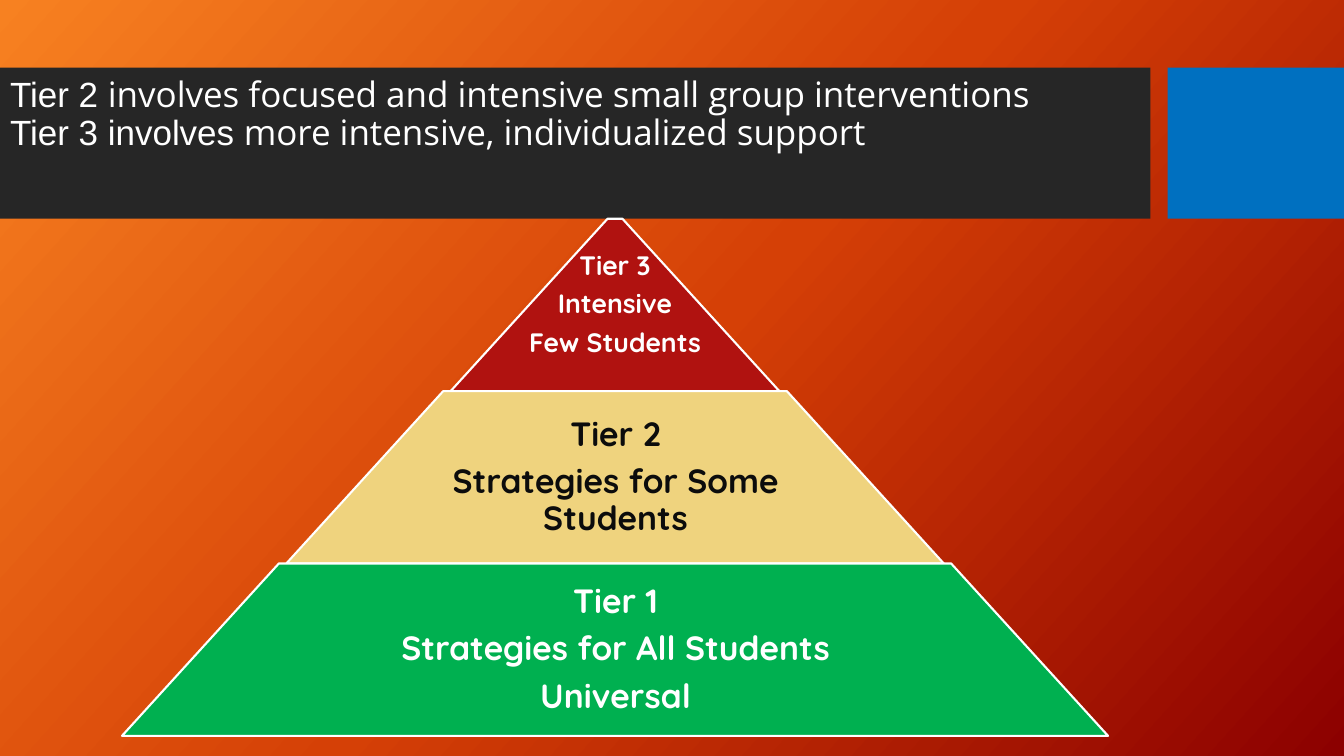
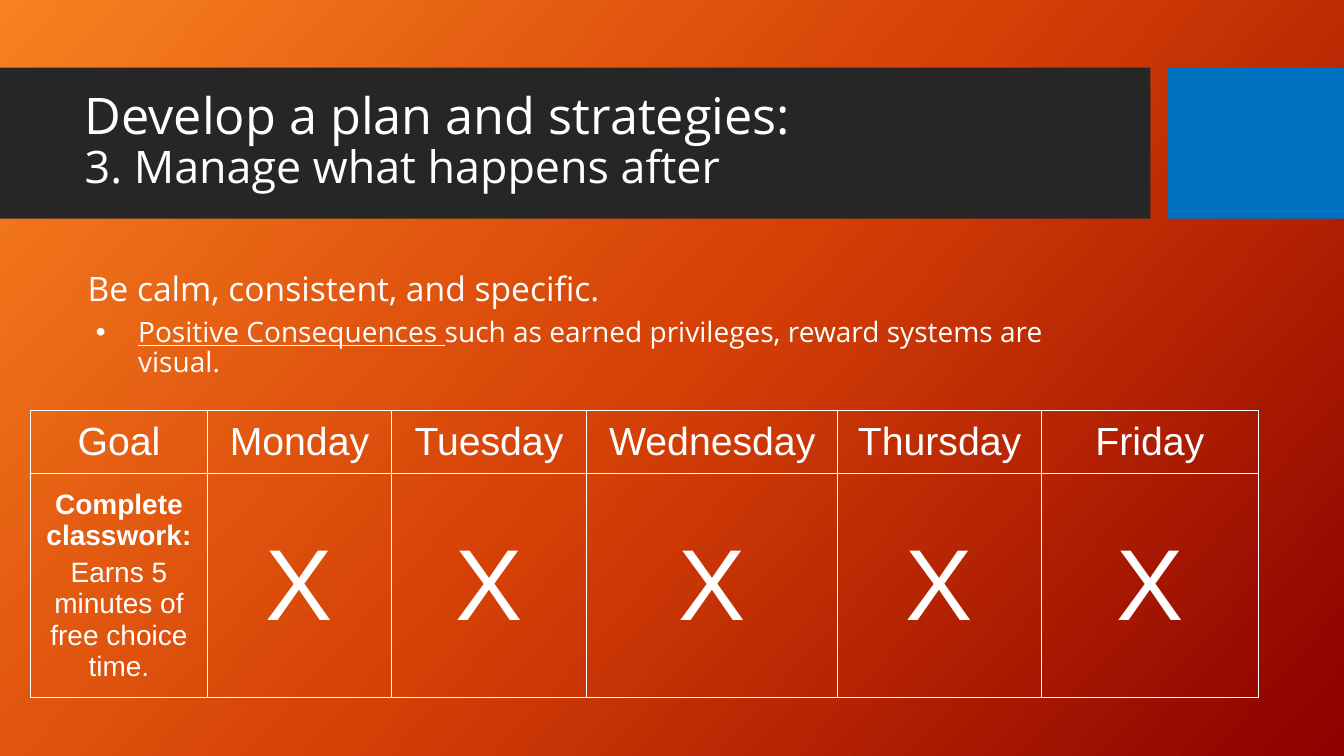
"""Build two classroom behaviour-support slides: the tier pyramid and the weekly reward plan."""
from copy import deepcopy
from dataclasses import dataclass
from typing import NamedTuple

from pptx import Presentation
from pptx.dml.color import RGBColor
from pptx.enum.shapes import MSO_SHAPE
from pptx.enum.text import MSO_ANCHOR, MSO_AUTO_SIZE, PP_ALIGN
from pptx.oxml.ns import qn
from pptx.oxml.xmlchemy import OxmlElement
from pptx.util import Emu, Pt


@dataclass(frozen=True)
class Theme:
    white: str = "FFFFFF"
    ink: str = "0C0C0C"
    band: str = "262626"
    accent: str = "0070C0"
    red: str = "B01210"
    sand: str = "EFD37E"
    green: str = "00B050"
    gradient: tuple = ((0, "F78121"), (0.5, "D54006"), (1, "8C0000"))
    gradient_angle: int = 318
    heading: str = "Open Sans"
    plain: str = "Arial"
    rounded: str = "Quicksand"
    title: int = 36
    subtitle: int = 32
    summary: int = 25
    lead: int = 24
    detail: int = 20
    tier: int = 24
    tier_small: int = 19
    table_head: int = 28
    mark: int = 72
    tight: float = 0.9


THEME = Theme()
EMU_PER_PX = 9144


class Span(NamedTuple):
    text: str
    size: int
    face: str = THEME.heading
    color: str = THEME.white
    bold: bool = False
    underline: bool = False


def px(*lengths):
    return [Emu(length * EMU_PER_PX) for length in lengths]


def rgb(color):
    return RGBColor.from_string(color)


def place(shape, box):
    shape.left, shape.top, shape.width, shape.height = px(*box)


def set_frame(frame, anchor, insets):
    frame.word_wrap = True
    frame.auto_size = MSO_AUTO_SIZE.NONE
    frame.vertical_anchor = anchor
    across, down = px(*insets)
    frame.margin_left = frame.margin_right = across
    frame.margin_top = frame.margin_bottom = down


def add_span(para, span):
    run = para.add_run()
    run.text = span.text.rstrip("\n")
    font = run.font
    font.name, font.size = span.face, Pt(span.size)
    font.bold, font.underline = span.bold, span.underline
    font.color.rgb = rgb(span.color)
    if span.text.endswith("\n"):
        para.add_line_break()
        para._p[-1].append(deepcopy(run._r.find(qn("a:rPr"))))


def add_paragraph(frame, spans, align=PP_ALIGN.LEFT, spacing=THEME.tight, before=0):
    first = frame.paragraphs[0]
    para = frame.add_paragraph() if first.runs else first
    para.alignment, para.line_spacing, para.space_before = align, spacing, Pt(before)
    for span in spans:
        add_span(para, span)
    return para


def set_bullet(para, left, hanging, symbol=None):
    properties = para._p.get_or_add_pPr()
    properties.set("marL", str(px(left)[0]))
    properties.set("indent", str(-px(hanging)[0]))
    if symbol is None:
        properties.append(OxmlElement("a:buNone"))
        return
    color = OxmlElement("a:buClr")
    value = OxmlElement("a:srgbClr")
    value.set("val", THEME.white)
    color.append(value)
    face = OxmlElement("a:buFont")
    face.set("typeface", THEME.plain)
    character = OxmlElement("a:buChar")
    character.set("char", symbol)
    properties.extend([color, face, character])


def add_filled(shapes, kind, box, color, line=None):
    shape = shapes.add_shape(kind, *px(*box))
    shape.shadow.inherit = False
    shape.fill.solid()
    shape.fill.fore_color.rgb = rgb(color)
    if line:
        shape.line.color.rgb = rgb(line)
        shape.line.width = Pt(1.5)
    else:
        shape.line.fill.background()
    return shape


def style_master(master, page):
    fill = master.background.fill
    fill.gradient()
    fill.gradient_angle = THEME.gradient_angle
    stop_list = master.element.find(".//" + qn("a:gsLst"))
    stop_list.append(deepcopy(stop_list[-1]))
    for stop, (position, color) in zip(fill.gradient_stops, THEME.gradient):
        stop.position = position
        stop.color.rgb = rgb(color)
    bands = (((0, 67, 1141, 150), THEME.band), ((1158, 67, 175, 150), THEME.accent))
    for order, (box, color) in enumerate(bands):
        band = add_filled(page.shapes, MSO_SHAPE.RECTANGLE, box, color)
        band.element.find(".//" + qn("p:cNvPr")).set("id", str(100 + order))
        master.shapes.element.insert(2 + order, band.element)


def set_title(page, box, anchor, spans):
    title = page.shapes.title
    place(title, box)
    set_frame(title.text_frame, anchor, (10, 5))
    add_paragraph(title.text_frame, spans)


def add_pyramid(page):
    center, top, step, height = 610, 217, 326, 171
    tiers = (
        (THEME.red, THEME.white, THEME.tier_small, 7, 100,
         ("Tier 3", "Intensive", "Few Students")),
        (THEME.sand, THEME.ink, THEME.tier, 8, 65,
         ("Tier 2", "Strategies for Some Students")),
        (THEME.green, THEME.white, THEME.tier, 8, 65,
         ("Tier 1", "Strategies for All Students", "Universal")),
    )
    group = page.shapes.add_group_shape()
    for level, (fill, color, size, before, percent, lines) in enumerate(tiers):
        width = step * (level + 1)
        y = top + level * height
        tier = add_filled(group.shapes, MSO_SHAPE.TRAPEZOID,
                          (center - width // 2, y, width, height), fill, THEME.white)
        tier.adjustments[0] = 0.91
        text_width = width * percent // 100
        label = group.shapes.add_textbox(
            *px(center - text_width // 2, y, text_width, height))
        set_frame(label.text_frame, MSO_ANCHOR.MIDDLE, (3, 3))
        for index, line in enumerate(lines):
            add_paragraph(label.text_frame,
                          [Span(line, size, THEME.rounded, color, bold=True)],
                          PP_ALIGN.CENTER, before=before if index else 0)


def set_borders(cell):
    properties = cell._tc.get_or_add_tcPr()
    for order, side in enumerate(("a:lnL", "a:lnR", "a:lnT", "a:lnB")):
        line = OxmlElement(side)
        line.set("w", str(Pt(1)))
        fill = OxmlElement("a:solidFill")
        color = OxmlElement("a:srgbClr")
        color.set("val", THEME.white)
        fill.append(color)
        line.append(fill)
        properties.insert(order, line)


def fill_cell(cell, spans):
    cell.fill.background()
    set_borders(cell)
    cell.vertical_anchor = MSO_ANCHOR.MIDDLE
    cell.margin_left, cell.margin_right, cell.margin_top, cell.margin_bottom = px(13, 13, 5, 5)
    for index, span in enumerate(spans):
        add_paragraph(cell.text_frame, [span], PP_ALIGN.CENTER, 1.0, 4 if index else 0)


def add_week_table(page):
    widths, heights = (176, 182, 194, 249, 202, 215), (63, 222)
    days = ("Monday", "Tuesday", "Wednesday", "Thursday", "Friday")
    goal = [Span("Complete classwork:", THEME.detail, THEME.plain, bold=True),
            Span("Earns 5 minutes of free choice time.", THEME.detail, THEME.plain)]
    rows = (
        [[Span(name, THEME.table_head, THEME.plain)] for name in ("Goal", *days)],
        [goal] + [[Span("X", THEME.mark, THEME.plain)] for _ in days],
    )
    table = page.shapes.add_table(
        len(heights), len(widths), *px(30, 407, sum(widths), sum(heights))).table
    table.first_row = table.horz_banding = False
    for column, width in zip(table.columns, px(*widths)):
        column.width = width
    for row, height, contents in zip(table.rows, px(*heights), rows):
        row.height = height
        for cell, spans in zip(row.cells, contents):
            fill_cell(cell, spans)


def build_tiers(page):
    set_title(page, (0, 72, 1115, 109), MSO_ANCHOR.TOP, [
        Span("Tier 2 ", THEME.summary, THEME.plain),
        Span("involves focused and intensive small group interventions\n", THEME.summary),
        Span("Tier 3 involves ", THEME.summary, THEME.plain),
        Span("more intensive, individualized support", THEME.summary),
    ])
    add_pyramid(page)


def build_plan(page):
    set_title(page, (74, 82, 1051, 118), MSO_ANCHOR.MIDDLE, [
        Span("Develop a plan and strategies:\n", THEME.title),
        Span("3. Manage what happens after", THEME.subtitle),
    ])
    body = page.placeholders[1]
    place(body, (74, 263, 1051, 119))
    set_frame(body.text_frame, MSO_ANCHOR.TOP, (13, 7))
    lead = add_paragraph(body.text_frame,
                         [Span("Be calm, consistent, and specific.", THEME.lead)])
    set_bullet(lead, 50, 50)
    detail = add_paragraph(body.text_frame, [
        Span("Positive Consequences ", THEME.detail, underline=True),
        Span("such as earned privileges, reward systems are visual.", THEME.detail),
    ], before=7)
    set_bullet(detail, 50, 42, "•")
    add_week_table(page)


def main():
    deck = Presentation()
    deck.slide_width, deck.slide_height = px(1333, 750)
    layouts = deck.slide_layouts
    tiers = deck.slides.add_slide(layouts.get_by_name("Title Only"))
    plan = deck.slides.add_slide(layouts.get_by_name("Title and Content"))
    style_master(deck.slide_master, tiers)
    build_tiers(tiers)
    build_plan(plan)
    deck.save("out.pptx")


if __name__ == "__main__":
    main()
